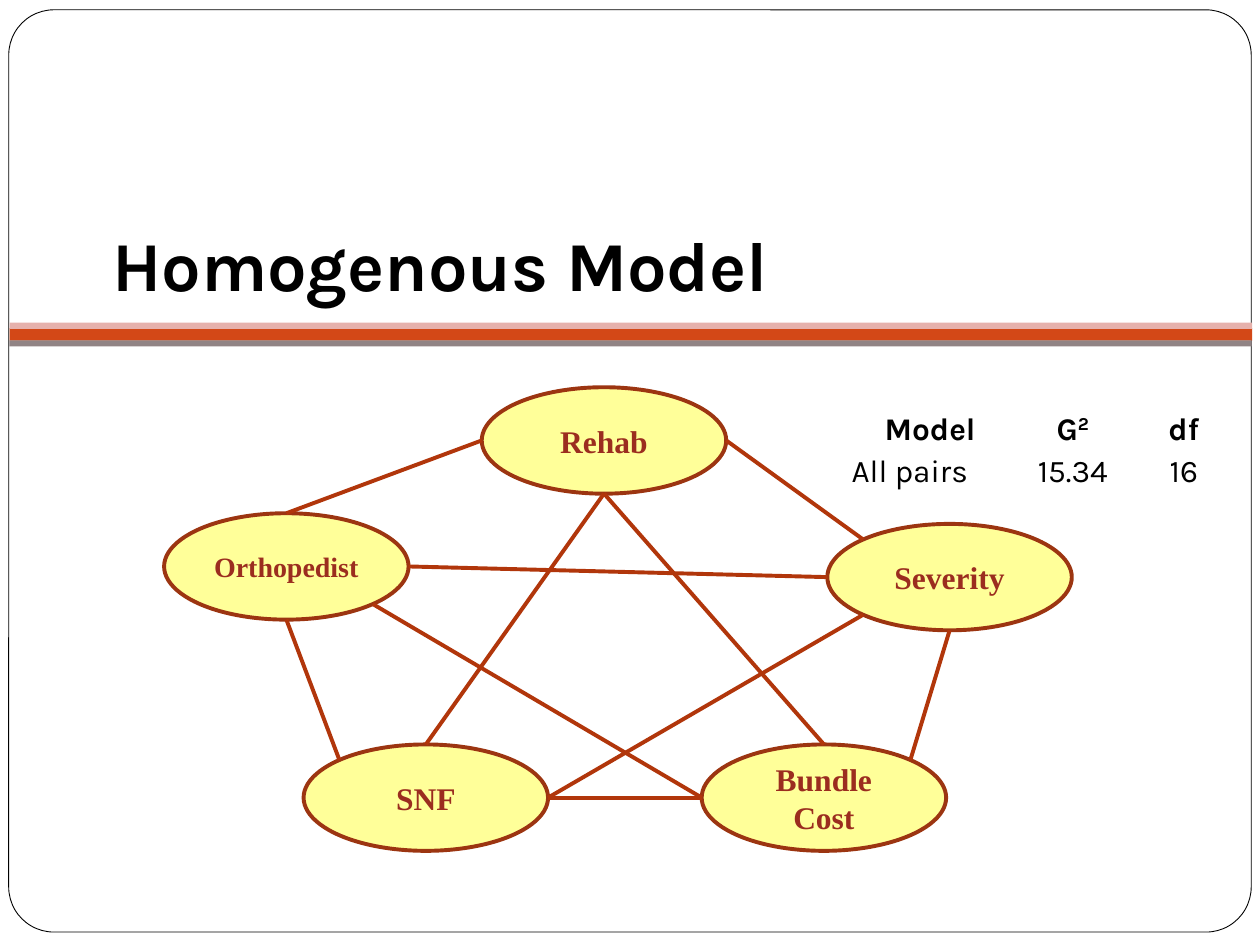
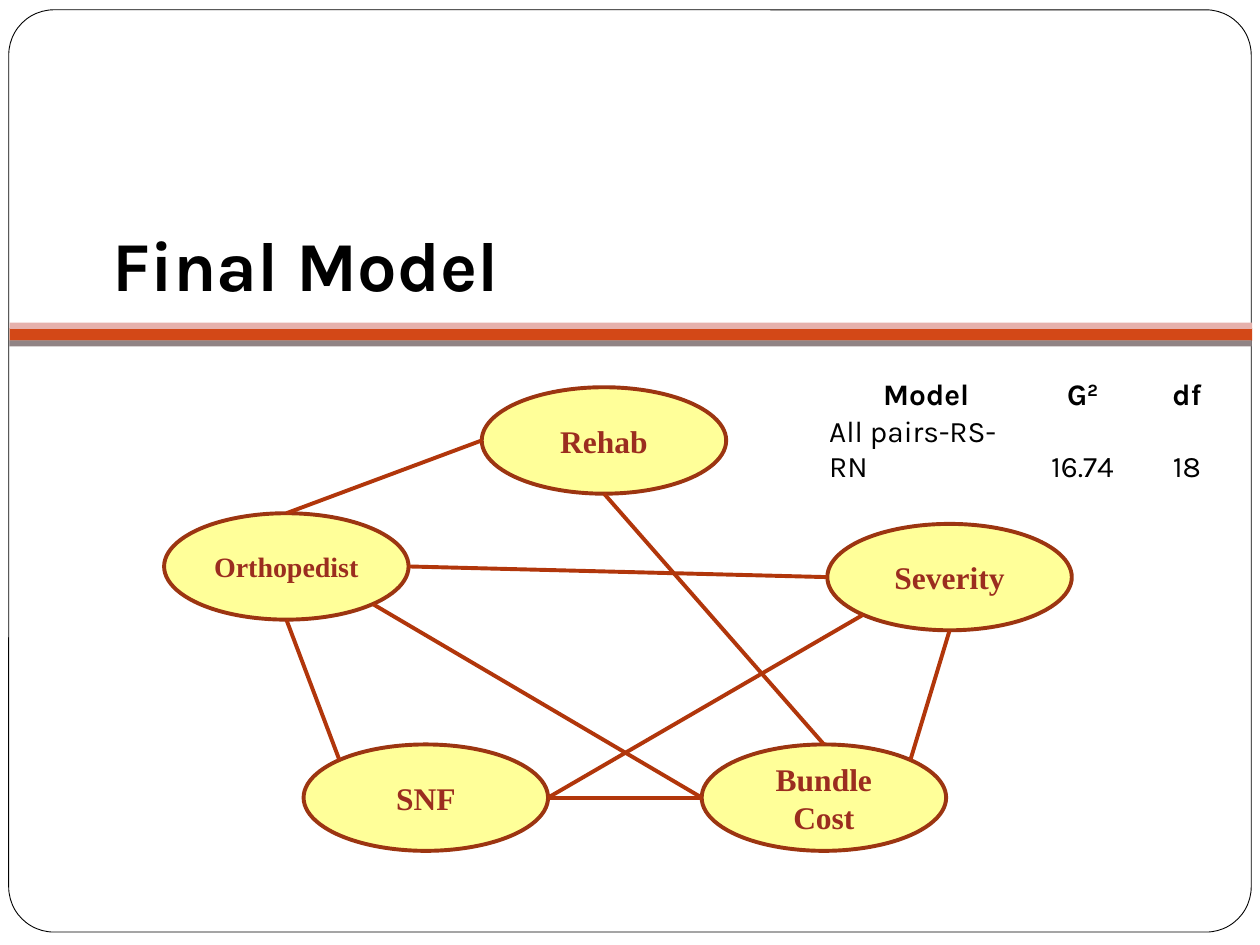
from lxml import etree
from pptx import Presentation
from pptx.dml.color import RGBColor
from pptx.enum.shapes import MSO_CONNECTOR, MSO_SHAPE
from pptx.enum.text import MSO_ANCHOR, PP_ALIGN
from pptx.oxml.ns import qn
from pptx.util import Pt

ROUNDED, BAR, OVAL = MSO_SHAPE.ROUNDED_RECTANGLE, MSO_SHAPE.RECTANGLE, MSO_SHAPE.OVAL
STRAIGHT = MSO_CONNECTOR.STRAIGHT
BOTTOM, MIDDLE = MSO_ANCHOR.BOTTOM, MSO_ANCHOR.MIDDLE
LEFT, CENTER = PP_ALIGN.LEFT, PP_ALIGN.CENTER

# Content: factors of the model, and the pairs of sides that links join
FACTORS = {  # name: (left, top, type size)
    "Orthopedist": (93.8, 293.3, 16),
    "Rehab": (275.3, 221.3, 18),
    "Severity": (472.8, 299.4, 18),
    "SNF": (173.5, 425.4, 18),
    "Bundle Cost": (401, 425.4, 18),
}
FINAL_LINKS = [
    ("Orthopedist", "top", "Rehab", "left"),
    ("Orthopedist", "bottom", "SNF", "top left"),
    ("Orthopedist", "bottom right", "Bundle Cost", "left"),
    ("SNF", "right", "Bundle Cost", "left"),
    ("SNF", "right", "Severity", "bottom left"),
    ("Bundle Cost", "top right", "Severity", "bottom"),
    ("Orthopedist", "right", "Severity", "left"),
    ("Rehab", "bottom", "Bundle Cost", "top"),
]
DROPPED_LINKS = [
    ("Rehab", "right", "Severity", "top left"),
    ("SNF", "top", "Rehab", "bottom"),
]
FIT_HEADINGS = ["Model", "G^2", "df"]  # ^ starts a superscript
MODELS = [
    {"title": "Homogenous Model", "links": FINAL_LINKS + DROPPED_LINKS,
     "fit": ["All pairs", "15.34", "16"], "at": (486, 228.2), "size": 18,
     "columns": (91, 72, 55), "rows": (28, 24), "inset": 0.7},
    {"title": "Final Model", "links": FINAL_LINKS,
     "fit": ["All pairs-RS-RN", "16.74", "18"], "at": (473.8, 210.2), "size": 17,
     "columns": (111, 67.5, 52), "rows": (26, 22.5), "inset": 0},
]

THEME = {
    "white": "FFFFFF", "ink": "000000",
    "band": "D34817", "band light": "E6B1AC", "band dark": "918485",
    "oval": "FFFF99", "oval edge": "9C3511", "oval text": "9B2D1F", "link": "B1360B",
    "body font": "Karla", "oval font": "Times New Roman",
    "title size": 40, "frame width": 0.5, "stroke": 2.25,
}
BANDS = [  # colour, left, top, height
    ("band", 5.5, 187.5, 7.2),
    ("band light", 5.5, 184.3, 3.6),
    ("band dark", 5.3, 194.5, 3.4),
]
SLIDE_W, SLIDE_H = 720, 540
FRAME_W = 710
OVAL_W, OVAL_H = 139.7, 60.8
DIAGONAL = 0.5 ** 0.5  # corner links meet the oval at 45 degrees
X_SIDES = {"left": -1, "right": 1}
Y_SIDES = {"top": -1, "bottom": 1}


def color(name):
    return RGBColor.from_string(THEME[name])


def apply(target, values):
    for attribute, value in values.items():
        setattr(target, attribute, value)


def margins(left, top, right, bottom):
    return {"margin_left": Pt(left), "margin_top": Pt(top),
            "margin_right": Pt(right), "margin_bottom": Pt(bottom)}


def write(paragraph, text, size, font, ink, bold=True, align=LEFT):
    paragraph.alignment = align
    for index, part in enumerate(text.split("^")):
        run = paragraph.add_run()
        run.text = part
        apply(run.font, {"size": Pt(size), "name": THEME[font], "bold": bold})
        run.font.color.rgb = color(ink)
        if index:
            run.font._element.set("baseline", "30000")


def add_block(slide, kind, box, fill, edge=None, stroke=0):
    block = slide.shapes.add_shape(kind, *map(Pt, box))
    block.shadow.inherit = False
    block.fill.solid()
    block.fill.fore_color.rgb = color(fill)
    if edge:
        block.line.color.rgb = color(edge)
        block.line.width = Pt(stroke)
    else:
        block.line.fill.background()
    return block


def add_base(slide, title):
    # Frame and bands
    frame = add_block(slide, ROUNDED, (5, 5.6, FRAME_W, 527), "white", "ink", THEME["frame width"])
    frame.adjustments[0] = 0.049
    for fill, left, top, height in BANDS:
        add_block(slide, BAR, (left, top, FRAME_W, height), fill)
    # Title
    heading = slide.shapes.add_textbox(Pt(57), Pt(75), Pt(612), Pt(107)).text_frame
    apply(heading, {"word_wrap": True, "vertical_anchor": BOTTOM, **margins(7.2, 3.6, 7.2, 7.2)})
    write(heading.paragraphs[0], title, THEME["title size"], "body font", "ink")


def add_factor(slide, name):
    left, top, size = FACTORS[name]
    oval = add_block(slide, OVAL, (left, top, OVAL_W, OVAL_H), "oval", "oval edge", THEME["stroke"])
    apply(oval.text_frame, {"word_wrap": True, "vertical_anchor": MIDDLE})
    write(oval.text_frame.paragraphs[0], name, size, "oval font", "oval text", align=CENTER)


def link_point(name, side):
    left, top, _ = FACTORS[name]
    words = side.split()
    reach = DIAGONAL if len(words) == 2 else 1
    x = sum(X_SIDES.get(word, 0) for word in words) * reach
    y = sum(Y_SIDES.get(word, 0) for word in words) * reach
    return Pt(left + OVAL_W / 2 * (1 + x)), Pt(top + OVAL_H / 2 * (1 + y))


def add_link(slide, start, start_side, end, end_side):
    link = slide.shapes.add_connector(
        STRAIGHT, *link_point(start, start_side), *link_point(end, end_side))
    link.line.color.rgb = color("link")
    link.line.width = Pt(THEME["stroke"])
    etree.SubElement(link._element.spPr, qn("a:effectLst"))


def add_fit_table(slide, model):
    box = (*model["at"], sum(model["columns"]), sum(model["rows"]))
    table = slide.shapes.add_table(2, len(FIT_HEADINGS), *map(Pt, box)).table
    apply(table, {"first_row": False, "horz_banding": False})
    for column, width in zip(table.columns, model["columns"]):
        column.width = Pt(width)
    inset = model["inset"]
    for r, texts in enumerate([FIT_HEADINGS, model["fit"]]):
        table.rows[r].height = Pt(model["rows"][r])
        for c, text in enumerate(texts):
            cell = table.cell(r, c)
            apply(cell, {"vertical_anchor": BOTTOM, **margins(inset, inset, inset, 0)})
            cell.fill.solid()
            cell.fill.fore_color.rgb = color("white")
            is_heading = r == 0
            write(cell.text_frame.paragraphs[0], text, model["size"], "body font", "ink",
                  bold=is_heading, align=CENTER if is_heading or c else LEFT)


def main():
    deck = Presentation()
    apply(deck, {"slide_width": Pt(SLIDE_W), "slide_height": Pt(SLIDE_H)})
    for model in MODELS:
        slide = deck.slides.add_slide(deck.slide_layouts[6])
        add_base(slide, model["title"])
        for name in FACTORS:
            add_factor(slide, name)
        for link in model["links"]:
            add_link(slide, *link)
        add_fit_table(slide, model)
    deck.save("out.pptx")


if __name__ == "__main__":
    main()
